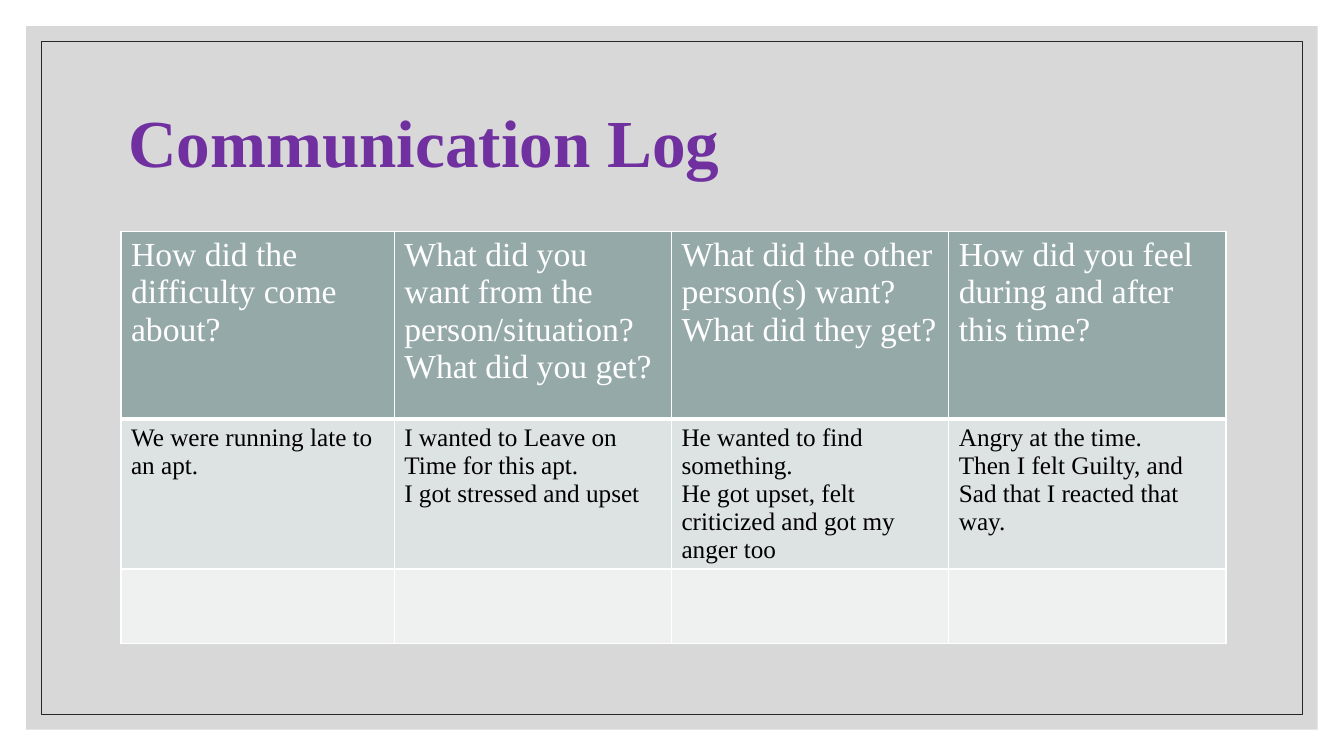
from dataclasses import dataclass

from lxml import etree
from pptx import Presentation
from pptx import util as u
from pptx.dml.color import RGBColor
from pptx.enum import shapes, text
from pptx.oxml import ns

SLIDE_W, SLIDE_H = 13.33, 7.5
COLUMN_WIDTHS = (2.71, 2.75, 2.75, 2.75)
ROW_HEIGHTS = (1.86, 0.74, 0.74)


@dataclass(frozen=True)
class Theme:
    font: str = "Times New Roman"
    title: str = "7030A0"
    panel: str = "BFBFBF"
    panel_opacity: int = 60
    frame: str = "262626"
    border: str = "FFFFFF"
    row_fills: tuple = ("96A9A9", "DDE2E2", "EFF1F1")
    row_inks: tuple = ("FFFFFF", "000000", "000000")
    row_sizes: tuple = (24, 18, 18)
    title_size: int = 48
    thin: int = 1
    thick: int = 3


THEME = Theme()

LOG = (
    (
        ("How did the", "difficulty come", "about?"),
        ("What did you", "want from the person/situation?", "What did you get?"),
        ("What did the other", "person(s) want? What did they get?"),
        ("How did you feel", "during and after this time?"),
    ),
    (
        ("We were running late to an apt.",),
        ("I wanted to Leave on Time for this apt.", "I got stressed and upset"),
        ("He wanted to find something.",
         "He got upset, felt criticized and got my anger too"),
        ("Angry at the time.", "Then I felt Guilty, and",
         "Sad that I reacted that way."),
    ),
    ((), (), (), ()),
)


def rgb(code):
    return RGBColor.from_string(code)


def add_run(paragraph, words, size, color, bold=False):
    run = paragraph.add_run()
    run.text = words
    run.font.name = THEME.font
    run.font.size = u.Pt(size)
    run.font.bold = bold
    run.font.color.rgb = rgb(color)


def add_backdrop(slide, inset):
    backdrop = slide.shapes.add_shape(
        shapes.MSO_SHAPE.RECTANGLE, u.Inches(inset), u.Inches(inset),
        u.Inches(SLIDE_W - 2 * inset), u.Inches(SLIDE_H - 2 * inset))
    backdrop.shadow.inherit = False
    slide.shapes.title.element.addprevious(backdrop.element)
    return backdrop


def add_panel(slide):
    panel = add_backdrop(slide, 0.26)
    panel.line.fill.background()
    panel.fill.solid()
    panel.fill.fore_color.rgb = rgb(THEME.panel)
    tint = panel.element.spPr.find(ns.qn("a:solidFill")).find(ns.qn("a:srgbClr"))
    etree.SubElement(tint, ns.qn("a:alpha"), val=str(THEME.panel_opacity * 1000))


def add_frame(slide):
    frame = add_backdrop(slide, 0.41)
    frame.fill.background()
    frame.line.color.rgb = rgb(THEME.frame)
    frame.line.width = u.Pt(0.5)


def set_title(slide, words):
    title = slide.shapes.title
    title.left, title.top = u.Inches(1.17), u.Inches(0.7)
    title.width, title.height = u.Inches(11), u.Inches(1.5)
    title.text_frame.auto_size = text.MSO_AUTO_SIZE.NONE
    title.text_frame.vertical_anchor = text.MSO_ANCHOR.MIDDLE
    heading = title.text_frame.paragraphs[0]
    heading.alignment = text.PP_ALIGN.LEFT
    heading.line_spacing = 0.9
    add_run(heading, words, THEME.title_size, THEME.title, bold=True)


def set_borders(cell, top, bottom):
    properties = cell._tc.get_or_add_tcPr()
    sides = {"lnL": THEME.thin, "lnR": THEME.thin, "lnT": top, "lnB": bottom}
    for side, width in sides.items():
        edge = etree.SubElement(properties, ns.qn(f"a:{side}"), w=str(u.Pt(width)))
        paint = etree.SubElement(edge, ns.qn("a:solidFill"))
        etree.SubElement(paint, ns.qn("a:srgbClr"), val=THEME.border)


def fill_cell(cell, row, lines):
    set_borders(cell,
                top=THEME.thick if row == 1 else THEME.thin,
                bottom=THEME.thick if row == 0 else THEME.thin)
    cell.fill.solid()
    cell.fill.fore_color.rgb = rgb(THEME.row_fills[row])
    frame = cell.text_frame
    for index, line in enumerate(lines):
        paragraph = frame.add_paragraph() if index else frame.paragraphs[0]
        add_run(paragraph, line, THEME.row_sizes[row], THEME.row_inks[row])


def add_log(slide):
    log = slide.shapes.add_table(
        len(ROW_HEIGHTS), len(COLUMN_WIDTHS), u.Inches(1.2), u.Inches(2.3),
        u.Inches(sum(COLUMN_WIDTHS)), u.Inches(sum(ROW_HEIGHTS))).table
    for column, width in zip(log.columns, COLUMN_WIDTHS):
        column.width = u.Inches(width)
    for row, (height, entries) in enumerate(zip(ROW_HEIGHTS, LOG)):
        log.rows[row].height = u.Inches(height)
        for column, lines in enumerate(entries):
            fill_cell(log.cell(row, column), row, lines)


def main():
    deck = Presentation()
    deck.slide_width, deck.slide_height = u.Inches(SLIDE_W), u.Inches(SLIDE_H)
    slide = deck.slides.add_slide(deck.slide_layouts.get_by_name("Title Only"))
    add_panel(slide)
    add_frame(slide)
    set_title(slide, "Communication Log")
    add_log(slide)
    deck.save("out.pptx")


if __name__ == "__main__":
    main()
